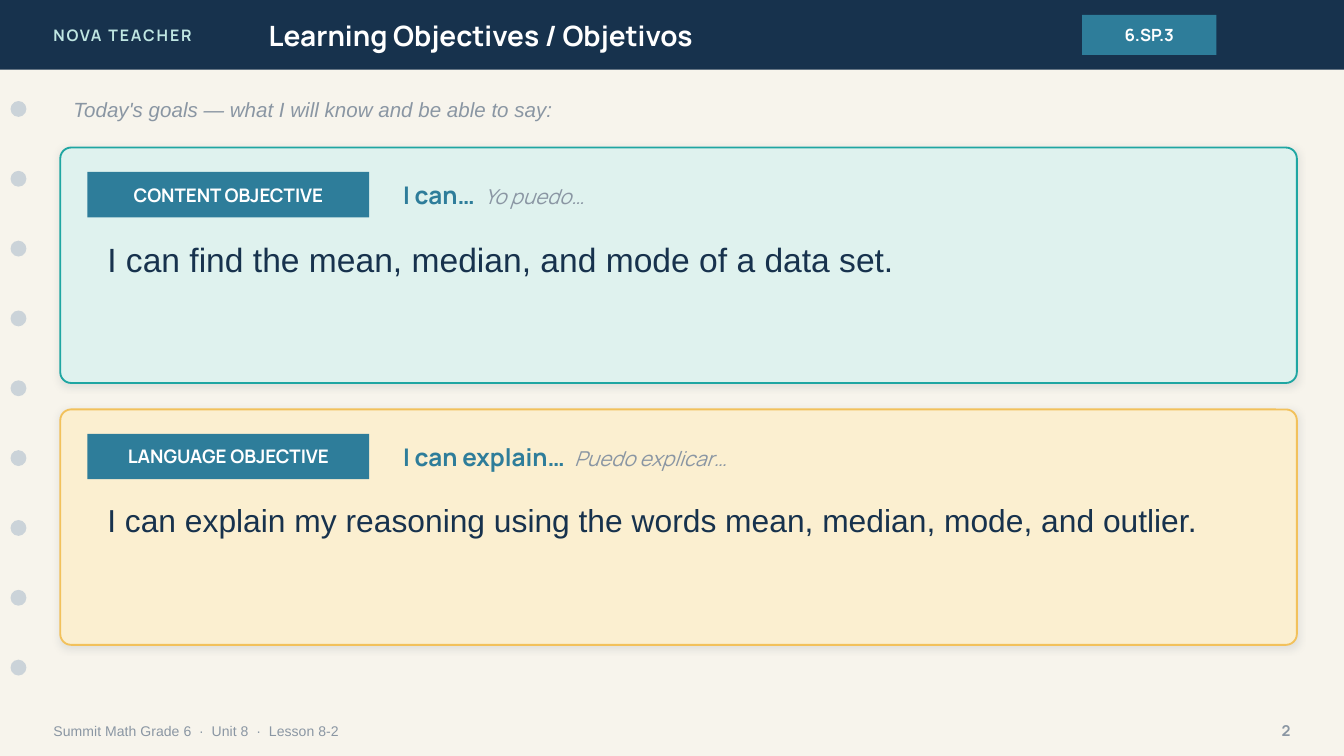
"""Build the Learning Objectives slide with a content card and a language card."""
from dataclasses import dataclass

from lxml.etree import SubElement
from pptx import Presentation
from pptx.dml.color import RGBColor
from pptx.enum.shapes import MSO_SHAPE as Shape
from pptx.enum.text import MSO_ANCHOR as Anchor, PP_ALIGN as Align
from pptx.oxml.ns import qn
from pptx.util import Cm, Pt


@dataclass(frozen=True)
class Theme:
    paper: str = "F7F4EC"
    navy: str = "17324D"
    blue: str = "2E7D9A"
    aqua: str = "BFE6E2"
    white: str = "FFFFFF"
    gray: str = "8A96A3"
    dot: str = "CBD3D9"
    mint: str = "DFF2EE"
    teal: str = "1FA6A2"
    cream: str = "FBEFD0"
    gold: str = "F2C15B"
    shadow: str = "1C2E42"
    heading: str = "Manrope"
    body: str = "Arial"
    title_size: float = 15
    starter_size: float = 13
    note_size: float = 11
    tag_size: float = 10
    code_size: float = 9
    brand_size: float = 8.5
    page_size: float = 8
    footer_size: float = 7.5
    content_size: float = 18
    language_size: float = 17


theme = Theme()
prs = Presentation()
prs.slide_width, prs.slide_height = Cm(25.4), Cm(14.29)
slide = prs.slides.add_slide(prs.slide_layouts[6])
slide.background.fill.solid()
slide.background.fill.fore_color.rgb = RGBColor.from_string(theme.paper)


def add_panel(kind, box, fill):
    panel = slide.shapes.add_shape(kind, *map(Cm, box))
    panel.shadow.inherit = False
    panel.fill.solid()
    panel.fill.fore_color.rgb = RGBColor.from_string(fill)
    panel.line.fill.background()
    return panel


def write(holder, runs, align=Align.LEFT, anchor=Anchor.MIDDLE):
    if isinstance(holder, tuple):
        holder = slide.shapes.add_textbox(*map(Cm, holder))
    frame = holder.text_frame
    frame.word_wrap = True
    frame.vertical_anchor = anchor
    paragraph = frame.paragraphs[0]
    paragraph.alignment = align
    for text, size, face, color, bold, italic in runs:
        run = paragraph.add_run()
        run.text = text
        run.font.size, run.font.name = Pt(size), face
        run.font.bold, run.font.italic = bold, italic
        run.font.color.rgb = RGBColor.from_string(color)
    return paragraph


add_panel(Shape.RECTANGLE, (0, 0, 25.4, 1.32), theme.navy)
brand = write((0.76, 0, 6.1, 1.32),
              [("NOVA TEACHER", theme.brand_size, theme.heading, theme.aqua, True, False)])
brand.runs[0]._r.get_or_add_rPr().set("spc", "100")
write((4.83, 0, 14.22, 1.32),
      [("Learning Objectives / Objetivos", theme.title_size, theme.heading, theme.white, True, False)])
standard = add_panel(Shape.RECTANGLE, (20.45, 0.28, 2.54, 0.76), theme.blue)
write(standard, [("6.SP.3", theme.code_size, theme.heading, theme.white, True, False)], Align.CENTER)

for hole in range(9):
    add_panel(Shape.OVAL, (0.2, 1.91 + 1.32 * hole, 0.3, 0.3), theme.dot)

write((0.76, 13.46, 17.78, 0.71),
      [("Summit Math Grade 6  ·  Unit 8  ·  Lesson 8-2", theme.footer_size, theme.body, theme.gray, False, False)])
write((23.37, 13.46, 1.27, 0.71),
      [("2", theme.page_size, theme.heading, theme.gray, True, False)], Align.RIGHT)
write((1.14, 1.68, 23.37, 0.76),
      [("Today's goals — what I will know and be able to say:",
        theme.note_size, theme.body, theme.gray, False, True)])

objectives = [
    ("CONTENT OBJECTIVE", "I can…  ", "Yo puedo…",
     "I can find the mean, median, and mode of a data set.",
     theme.content_size, theme.mint, theme.teal),
    ("LANGUAGE OBJECTIVE", "I can explain…  ", "Puedo explicar…",
     "I can explain my reasoning using the words mean, median, mode, and outlier.",
     theme.language_size, theme.cream, theme.gold),
]
for row, (label, starter, spanish, goal, goal_size, fill, border) in enumerate(objectives):
    top = 2.79 + 4.95 * row
    card = add_panel(Shape.ROUNDED_RECTANGLE, (1.14, top, 23.37, 4.45), fill)
    card.adjustments[0] = 0.046
    card.line.color.rgb = RGBColor.from_string(border)
    card.line.width = Pt(1)
    effects = card._element.spPr.find(qn("a:effectLst"))
    shadow = SubElement(effects, qn("a:outerShdw"), blurRad=str(Pt(4)), dist=str(Pt(1)),
                        dir="5400000", algn="bl", rotWithShape="0")
    tint = SubElement(shadow, qn("a:srgbClr"), val=theme.shadow)
    SubElement(tint, qn("a:alpha"), val="10000")

    tag = add_panel(Shape.RECTANGLE, (1.65, top + 0.46, 5.33, 0.86), theme.blue)
    write(tag, [(label, theme.tag_size, theme.heading, theme.white, True, False)], Align.CENTER)
    write((7.37, top + 0.46, 16.76, 0.86),
          [(starter, theme.starter_size, theme.heading, theme.blue, True, False),
           (spanish, theme.note_size, theme.heading, theme.gray, False, True)])
    statement = write((1.78, top + 1.57, 22.1, 2.54),
                      [(goal, goal_size, theme.body, theme.navy, False, False)], anchor=Anchor.TOP)
    statement.line_spacing = 1.05

prs.save("out.pptx")
